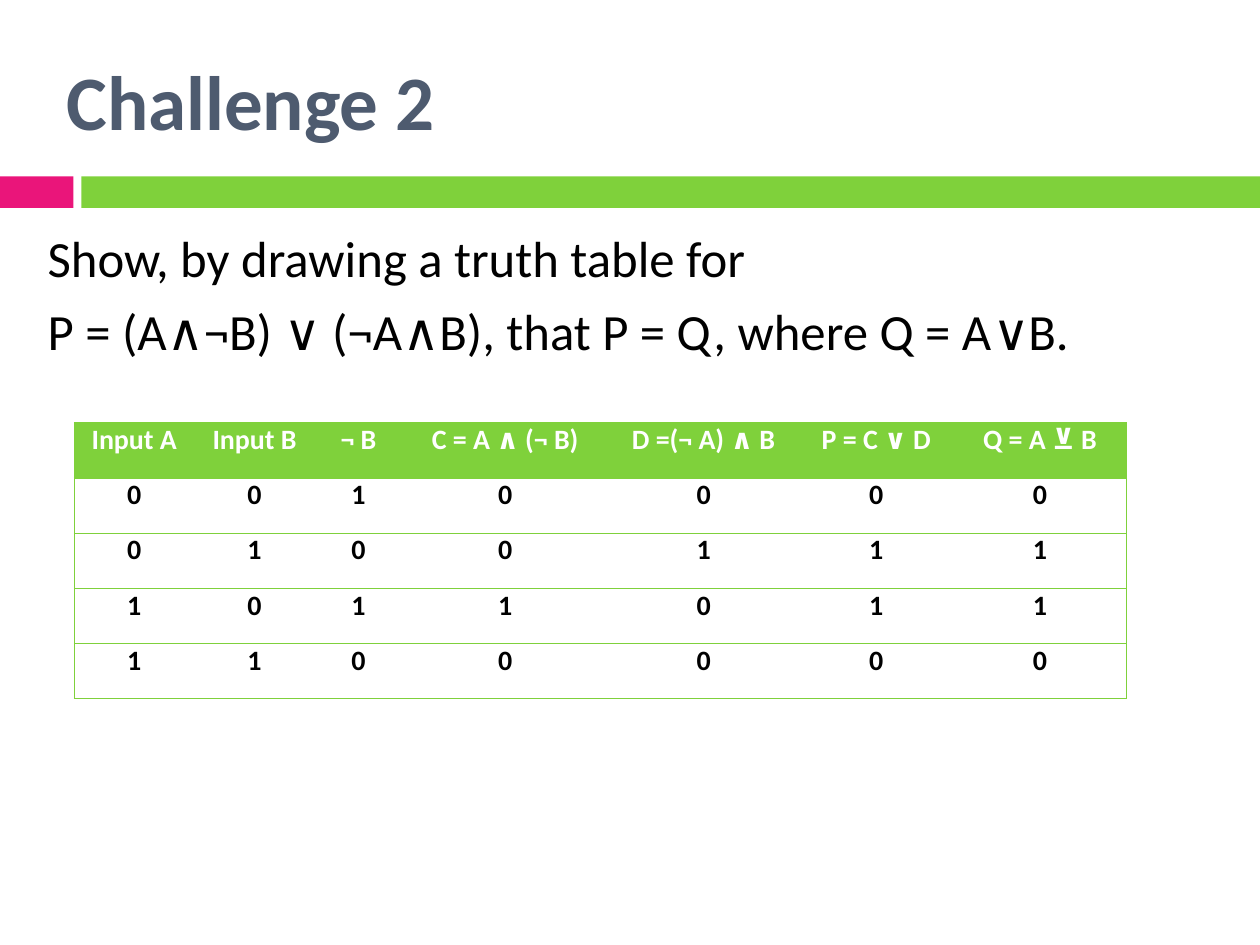
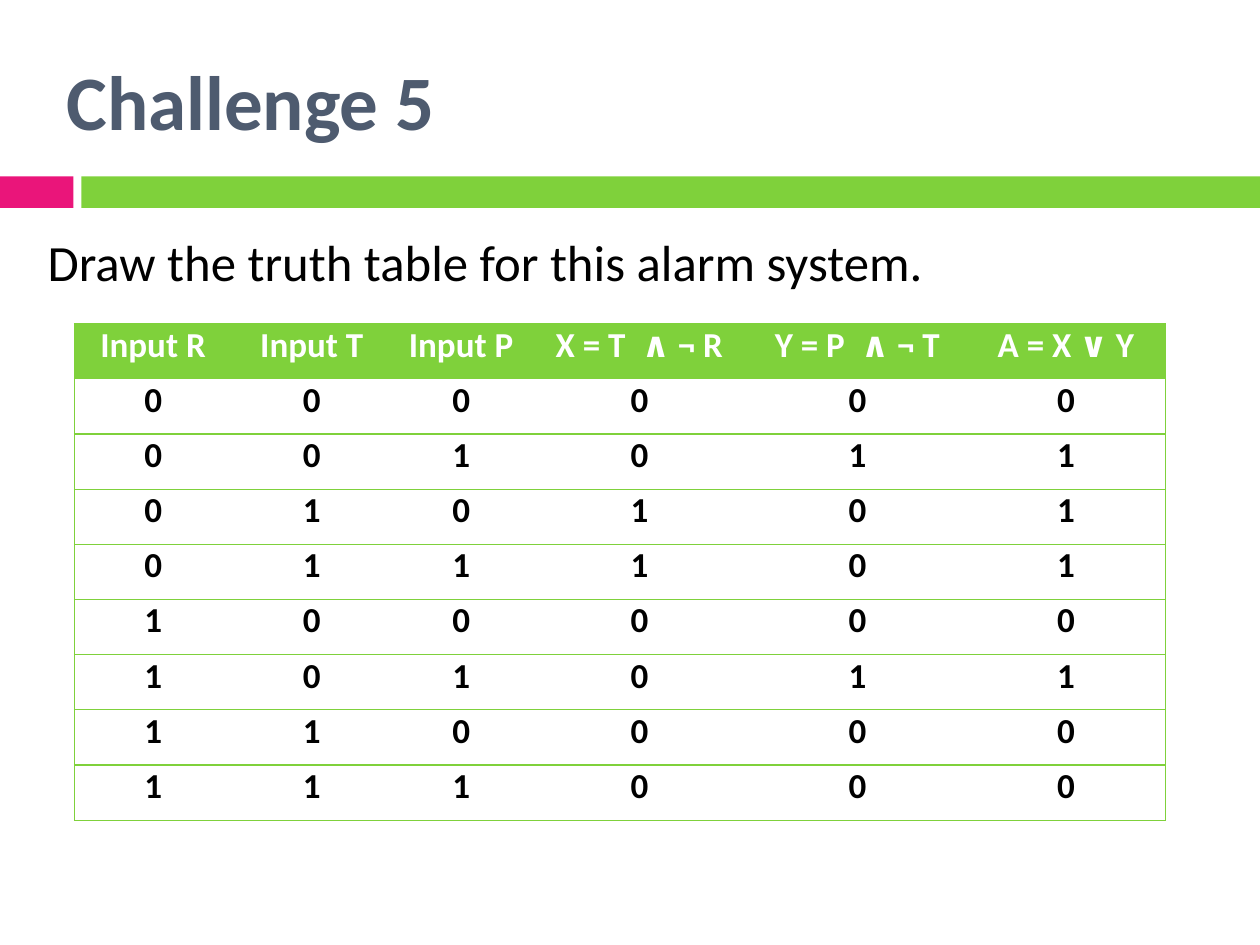
import dataclasses
import itertools

import pptx
import pptx.dml.color
import pptx.enum.shapes
import pptx.enum.text
import pptx.oxml
import pptx.oxml.ns
import pptx.util

FONT = "Calibri"
GREEN, PINK, SLATE = "7FD13B", "EA157A", "4E5B6F"
BLACK, WHITE = "000000", "FFFFFF"
WIDE, HIGH = pptx.util.Inches(10), pptx.util.Inches(7.5)
ALIGN = pptx.enum.text.PP_ALIGN
ANCHOR = pptx.enum.text.MSO_ANCHOR


@dataclasses.dataclass
class Box:
    """A frame in percent of the slide's width and height."""
    left: float
    top: float
    width: float
    height: float

    def frame(self) -> tuple[int, int, int, int]:
        return (round(WIDE * self.left / 100), round(HIGH * self.top / 100),
                round(WIDE * self.width / 100), round(HIGH * self.height / 100))


@dataclasses.dataclass
class Style:
    size: float
    color: str
    bold: bool = False


@dataclasses.dataclass
class Grid:
    """A truth table; cols are percent of the slide's width."""
    top: float
    size: float
    cols: list[float]
    heads: list[str]
    rows: list[str]


@dataclasses.dataclass
class Task:
    title: str
    lines: list[str]
    top: float
    grid: Grid


BANDS = [(Box(0, 18.67, 5.83, 3.33), PINK), (Box(6.46, 18.67, 93.54, 3.33), GREEN)]
TITLE = Box(4.3, 3.33, 93.7, 14.4)
LEFT, ROW = 5.9, 5.84

TASKS = [
    Task("Challenge 2",
         ["Show, by drawing a truth table for",
          "P = (A∧¬B) ∨ (¬A∧B), that P = Q, where Q = A∨B."], 23.33,
         Grid(44.75, 16, [9.5, 9.6, 6.9, 16.4, 15.1, 12.3, 13.7],
              ["Input A", "Input B", "¬ B", "C = A ∧ (¬ B)", "D =(¬ A) ∧ B",
               "P = C ∨ D", "Q = A ⊻ B"],
              ["0010000", "0100111", "1011011", "1100000"])),
    Task("Challenge 5", ["Draw the truth table for this alarm system."], 23.73,
         Grid(34.25, 20, [12.5, 12.7, 11, 17.3, 17.3, 15.8],
              ["Input R", "Input T", "Input P", "X = T  ∧ ¬ R", "Y = P  ∧ ¬ T",
               "A = X ∨ Y"],
              ["000000", "001011", "010101", "011101",
               "100000", "101011", "110000", "111000"])),
]


def paint(target, color: str) -> None:
    """Give a shape or cell a solid fill."""
    target.fill.solid()
    target.fill.fore_color.rgb = pptx.dml.color.RGBColor.from_string(color)


def dress(para, style: Style) -> None:
    """Format every run of a paragraph."""
    for run in para.runs:
        run.font.name = FONT
        run.font.size = pptx.util.Pt(style.size)
        run.font.bold = style.bold
        run.font.color.rgb = pptx.dml.color.RGBColor.from_string(style.color)


def write(slide, box: Box, lines: list[str], style: Style, anchor, gap: float = 0) -> None:
    frame = slide.shapes.add_textbox(*box.frame()).text_frame
    frame.word_wrap = True
    frame.vertical_anchor = anchor
    frame.text = "\n".join(lines)
    for para in frame.paragraphs:
        para.space_before = pptx.util.Pt(gap)
        dress(para, style)


def edge(cell, sides: str) -> None:
    """Draw green lines on the named sides (L, R, T, B) and clear the others."""
    props = cell._tc.get_or_add_tcPr()
    for place, side in enumerate("LRTB"):
        fill = (f'<a:solidFill><a:srgbClr val="{GREEN}"/></a:solidFill>'
                if side in sides else "<a:noFill/>")
        props.insert(place, pptx.oxml.parse_xml(
            f'<a:ln{side} {pptx.oxml.ns.nsdecls("a")} w="{pptx.util.Pt(0.79)}">'
            f'{fill}</a:ln{side}>'))


def tabulate(slide, grid: Grid) -> None:
    data = [grid.heads, *grid.rows]
    box = Box(LEFT, grid.top, sum(grid.cols), ROW * len(data))
    table = slide.shapes.add_table(len(data), len(grid.cols), *box.frame()).table
    table.horz_banding = False
    for col, share in zip(table.columns, grid.cols):
        col.width = round(WIDE * share / 100)
    last = len(grid.cols) - 1
    for r, c in itertools.product(range(len(data)), range(len(grid.cols))):
        cell = table.cell(r, c)
        cell.margin_left = cell.margin_right = pptx.util.Inches(0.07)
        cell.margin_top = cell.margin_bottom = 0
        cell.text_frame.text = data[r][c]
        para = cell.text_frame.paragraphs[0]
        para.alignment = ALIGN.CENTER
        dress(para, Style(grid.size, BLACK if r else WHITE, True))
        paint(cell, WHITE if r else GREEN)
        edge(cell, "TB" + "L" * (c == 0) + "R" * (c == last))


def band(slide, box: Box, color: str) -> None:
    shape = slide.shapes.add_shape(pptx.enum.shapes.MSO_SHAPE.RECTANGLE, *box.frame())
    shape.shadow.inherit = False
    shape.line.fill.background()
    paint(shape, color)


def build(deck, task: Task) -> None:
    slide = deck.slides.add_slide(deck.slide_layouts[6])
    for box, color in BANDS:
        band(slide, box, color)
    write(slide, TITLE, [task.title], Style(44, SLATE, True), ANCHOR.MIDDLE)
    write(slide, Box(2.8, task.top, 95.3, 17.2), task.lines, Style(29, BLACK),
          ANCHOR.TOP, 7)
    tabulate(slide, task.grid)


def main() -> None:
    deck = pptx.Presentation()
    deck.slide_width, deck.slide_height = WIDE, HIGH
    for task in TASKS:
        build(deck, task)
    deck.save("out.pptx")


if __name__ == "__main__":
    main()
